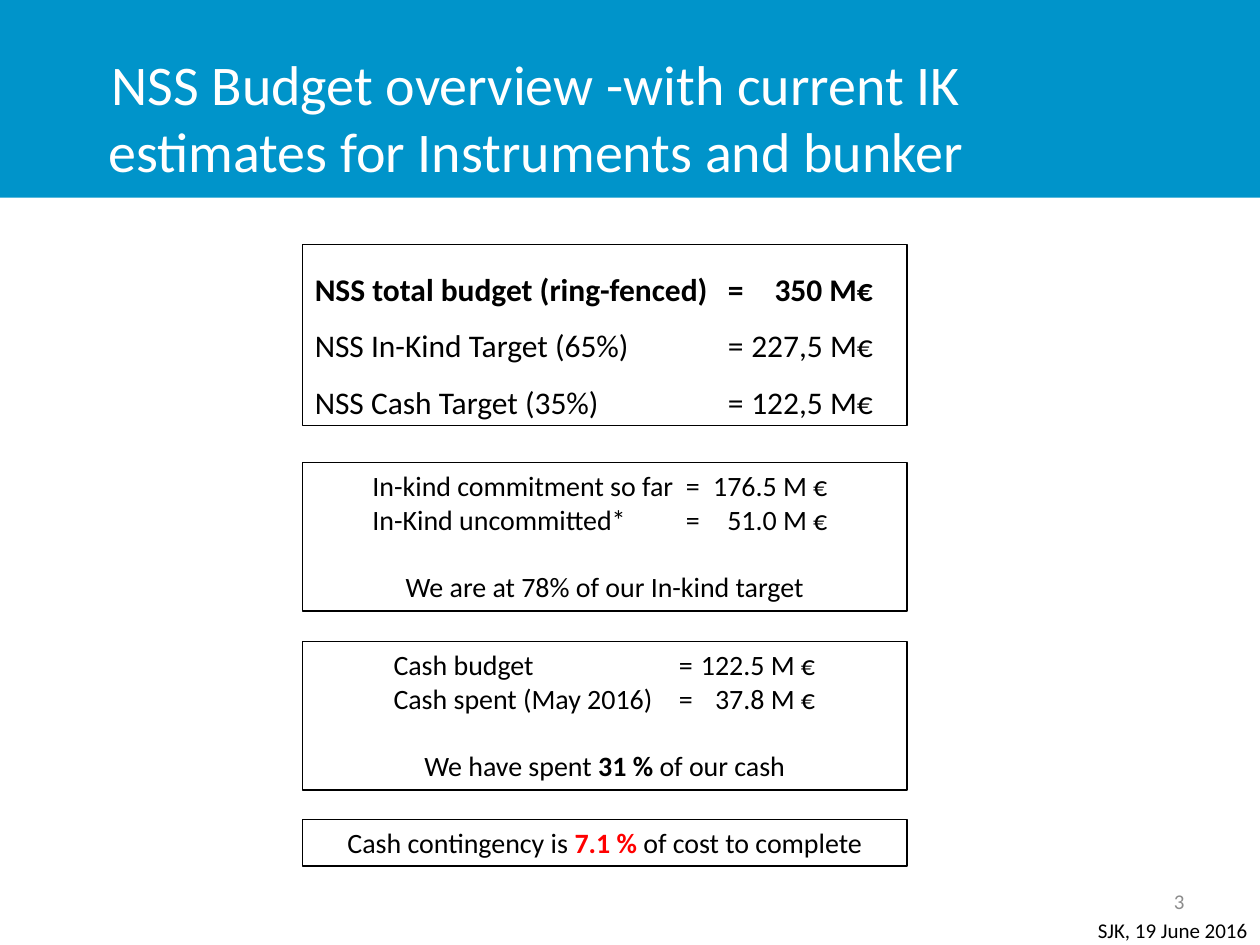
import pptx
import pptx.dml.color
import pptx.enum.shapes
import pptx.enum.text
import pptx.oxml.ns
import pptx.util
from lxml import etree

Pt = pptx.util.Pt
ALIGN = pptx.enum.text.PP_ALIGN
ANCHOR = pptx.enum.text.MSO_ANCHOR
COLORS = {"band": "0094CA", "white": "FFFFFF", "black": "000000", "grey": "8C8C8C", "red": "FF0000"}


def rgb(name):
    """Return the named palette colour."""
    return pptx.dml.color.RGBColor.from_string(COLORS[name])


def add_tabs(para, stops):
    """Give a paragraph tab stops as (position, alignment) pairs."""
    tab_list = etree.SubElement(para._p.get_or_add_pPr(), pptx.oxml.ns.qn("a:tabLst"))
    for position, side in stops:
        etree.SubElement(tab_list, pptx.oxml.ns.qn("a:tab"), pos=str(int(Pt(position))), algn=side)


def write(para, *parts, size=16, color="black", bold=False, align=ALIGN.LEFT, before=0, spacing=None, tabs=()):
    """Fill a paragraph with strings or (string, overrides) pairs."""
    para.alignment = align
    para.space_before = Pt(before)
    if spacing:
        para.line_spacing = spacing
    if tabs:
        add_tabs(para, tabs)
    for part in parts:
        text, changes = (part, {}) if isinstance(part, str) else part
        span = para.add_run()
        span.text = text
        span.font.name = "Calibri"
        span.font.size = Pt(size)
        span.font.bold = changes.get("bold", bold)
        span.font.color.rgb = rgb(changes.get("color", color))


def add_label(page, box, text, anchor=ANCHOR.TOP, **style):
    """Place a single-paragraph text box."""
    frame = page.shapes.add_textbox(*map(Pt, box)).text_frame
    frame.word_wrap = True
    frame.vertical_anchor = anchor
    write(frame.paragraphs[0], text, **style)


def add_rectangle(page, box, fill=None, line=None):
    """Place a plain rectangle with an optional fill and outline."""
    shape = page.shapes.add_shape(pptx.enum.shapes.MSO_SHAPE.RECTANGLE, *map(Pt, box))
    shape.shadow.inherit = False
    if fill:
        shape.fill.solid()
        shape.fill.fore_color.rgb = rgb(fill)
    else:
        shape.fill.background()
    if line:
        shape.line.color.rgb = rgb(line)
        shape.line.width = Pt(0.75)
    else:
        shape.line.fill.background()
    return shape


def add_header(page, box):
    """Draw the title band and its heading."""
    left, top, width, height = box
    add_rectangle(page, box, fill="band")
    add_label(page, (left + 14.4, top + 21.6, 584, 90),
              "NSS Budget overview -with current IK estimates for Instruments and bunker",
              anchor=ANCHOR.MIDDLE, size=32, color="white", align=ALIGN.CENTER)


def add_panel(page, box, rows=(), stops=(), summary=(), size=16, spacing=None, bold_first=False):
    """Draw an outlined panel of tabbed amounts and a centred summary."""
    frame = add_rectangle(page, box, line="black").text_frame
    frame.word_wrap = True
    frame.vertical_anchor = ANCHOR.TOP
    tabs = list(zip(stops, ("l", "l", "r")[-len(stops):])) if stops else ()
    for index, row in enumerate(rows):
        para = frame.add_paragraph() if index else frame.paragraphs[0]
        write(para, "\t".join(row), size=size, spacing=spacing, tabs=tabs, bold=bold_first and index == 0)
    if summary:
        para = frame.add_paragraph() if rows else frame.paragraphs[0]
        write(para, *summary, size=size, align=ALIGN.CENTER, before=19.5 if rows else 0)


def add_budget(page, box):
    """Stack the four budget panels in a column."""
    left, top, width, height = box
    add_panel(page, (left, top, width, 103.7),
              rows=[("NSS total budget (ring-fenced)", "=", "350 M€"),
                    ("NSS In-Kind Target (65%)", "=", "227,5 M€"),
                    ("NSS Cash Target (35%)", "=", "122,5 M€")],
              stops=(236, 319), size=18, spacing=1.5, bold_first=True)
    add_panel(page, (left, top + 124.5, width, 85),
              rows=[("", "In-kind commitment so far", "=", "176.5 M €"),
                    ("", "In-Kind uncommitted*", "=", "51.0 M €")],
              stops=(33, 212, 293), summary=["We are at 78% of our In-kind target"])
    add_panel(page, (left, top + 226.8, width, 85),
              rows=[("", "Cash budget", "=", "122.5 M €"),
                    ("", "Cash spent (May 2016)", "=", "37.8 M €")],
              stops=(45, 208, 286),
              summary=["We have spent ", ("31 % ", {"bold": True}), "of our cash"])
    add_panel(page, (left, top + 328.7, width, 26.6),
              summary=["Cash contingency is ", ("7.1 %", {"bold": True, "color": "red"}),
                       " of cost to complete"])


def add_footer(page, box):
    """Place the page number above the author and date."""
    left, top, width, height = box
    add_label(page, (left, top, 167.8, 28.8), "3", anchor=ANCHOR.MIDDLE,
              size=12, color="grey", align=ALIGN.RIGHT)
    add_label(page, (left + 84, top + 20.2, width - 84, 21.6), "SJK, 19 June 2016",
              size=12, align=ALIGN.RIGHT)


def main():
    """Build and save the budget slide."""
    deck = pptx.Presentation()
    deck.slide_width, deck.slide_height = Pt(720), Pt(540)
    page = deck.slides.add_slide(deck.slide_layouts[6])
    add_header(page, (0, 0, 720, 113))
    add_budget(page, (172.8, 139.7, 345.6, 355.3))
    add_footer(page, (516.2, 500.4, 203.8, 39.6))
    deck.save("out.pptx")


if __name__ == "__main__":
    main()
